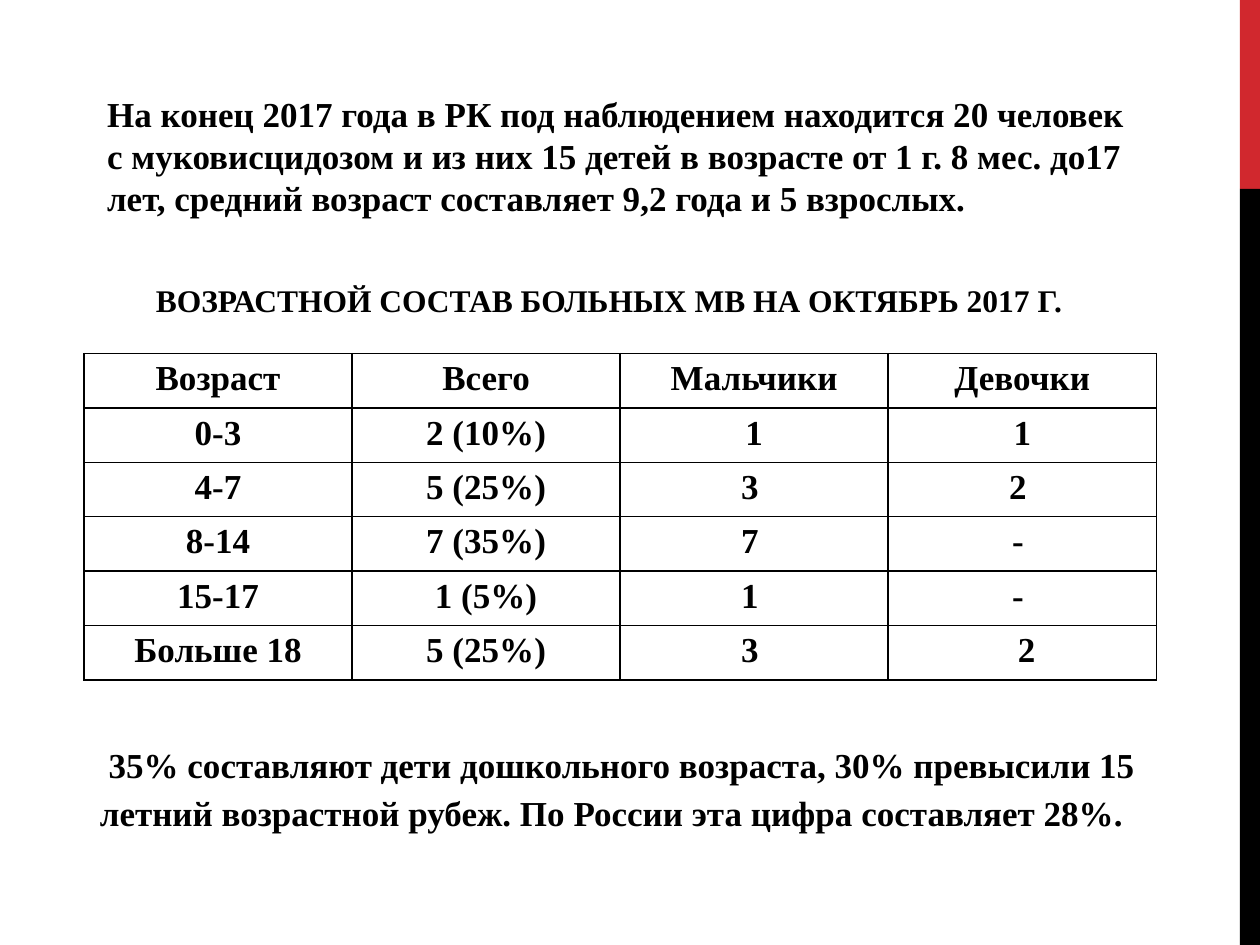
import pptx
import pptx.util
import pptx.dml.color
import pptx.enum.shapes
import pptx.enum.text
import pptx.oxml
import pptx.oxml.ns
import lxml.etree

Pt = pptx.util.Pt
RGBColor = pptx.dml.color.RGBColor
PP_ALIGN = pptx.enum.text.PP_ALIGN
qn = pptx.oxml.ns.qn

BLACK = RGBColor(0x00, 0x00, 0x00)
RED = RGBColor(0xD1, 0x28, 0x2E)
FONT = "Times New Roman"

INTRO = (
    "На конец 2017 года в РК под наблюдением находится 20 человек "
    "с муковисцидозом и из них 15 детей в возрасте от 1 г. 8 мес. до17 лет, "
    "средний возраст составляет 9,2 года и 5 взрослых."
)
CAPTION = "ВОЗРАСТНОЙ СОСТАВ БОЛЬНЫХ МВ НА ОКТЯБРЬ 2017 Г."
SUMMARY = (
    " 35% составляют дети дошкольного возраста, 30% превысили 15 летний "
    "возрастной рубеж. По России эта цифра составляет 28%."
)
AGES = [
    ("Возраст", "Всего", "Мальчики", "Девочки"),
    ("0-3", "2 (10%)", "1", "1"),
    ("4-7", "5 (25%)", "3 ", "2 "),
    ("8-14", "7 (35%)", "7 ", "- "),
    ("15-17", "1 (5%)", "1 ", "- "),
    ("Больше 18", "5 (25%)", "3 ", " 2"),
]

WIDTH, HEIGHT = 720, 540
STRIPE_W = 11.5
STRIPES = [(0, 108, RED), (108, HEIGHT - 108, BLACK)]
TABLE_LEFT, TABLE_TOP = 48, 202
COL_W, ROW_H = 153.2, 31.1


def write(tf, text, size=20):
    tf.text = text
    tf.word_wrap = True
    p = tf.paragraphs[0]
    font = p.runs[0].font
    font.name, font.size, font.bold = FONT, Pt(size), True
    font.color.rgb = BLACK
    return p


def add_text(slide, left, top, width, height, text, size=20):
    box = slide.shapes.add_textbox(Pt(left), Pt(top), Pt(width), Pt(height))
    return write(box.text_frame, text, size)


def add_borders(cell):
    tcPr = cell._tc.get_or_add_tcPr()
    for i, side in enumerate(("lnL", "lnR", "lnT", "lnB")):
        ln = lxml.etree.Element(qn("a:" + side), w=str(Pt(1)))
        fill = lxml.etree.SubElement(ln, qn("a:solidFill"))
        lxml.etree.SubElement(fill, qn("a:srgbClr"), val=str(BLACK))
        tcPr.insert(i, ln)


def add_stripes(slide):
    for top, height, color in STRIPES:
        sp = slide.shapes.add_shape(
            pptx.enum.shapes.MSO_SHAPE.RECTANGLE,
            Pt(WIDTH - STRIPE_W), Pt(top), Pt(STRIPE_W), Pt(height))
        sp.shadow.inherit = False
        sp.fill.solid()
        sp.fill.fore_color.rgb = color
        sp.line.fill.background()


def add_intro(slide):
    body = slide.placeholders[1]
    body.left, body.top, body.width, body.height = Pt(54), Pt(49), Pt(600), Pt(119)
    p = write(body.text_frame, INTRO)
    body.text_frame.auto_size = pptx.enum.text.MSO_AUTO_SIZE.NONE
    p.space_before, p.space_after = Pt(4), Pt(6)
    pPr = p._p.get_or_add_pPr()
    pPr.set("marL", "0")
    pPr.set("indent", "0")
    lxml.etree.SubElement(pPr, qn("a:buNone"))


def add_age_table(slide):
    rows, cols = len(AGES), len(AGES[0])
    table = slide.shapes.add_table(
        rows, cols, Pt(TABLE_LEFT), Pt(TABLE_TOP),
        Pt(COL_W * cols), Pt(ROW_H * rows)).table
    for col in table.columns:
        col.width = Pt(COL_W)
    for row, values in zip(table.rows, AGES):
        row.height = Pt(ROW_H)
        for cell, value in zip(row.cells, values):
            cell.margin_left = cell.margin_right = Pt(4.5)
            cell.margin_top = cell.margin_bottom = 0
            p = write(cell.text_frame, value)
            p.alignment, p.line_spacing = PP_ALIGN.CENTER, 1.15
            cell.fill.background()
            add_borders(cell)


def main():
    prs = pptx.Presentation()
    prs.slide_width, prs.slide_height = Pt(WIDTH), Pt(HEIGHT)
    slide = prs.slides.add_slide(prs.slide_layouts[1])
    title = slide.shapes.title
    title.element.getparent().remove(title.element)

    add_stripes(slide)
    add_intro(slide)
    add_text(slide, 82, 157, 544, 29, CAPTION, 18)
    add_age_table(slide)
    p = add_text(slide, 50, 417.5, 618, 63, SUMMARY)
    p.line_spacing, p.space_after = 1.15, Pt(10)
    prs.save("out.pptx")


if __name__ == "__main__":
    main()
